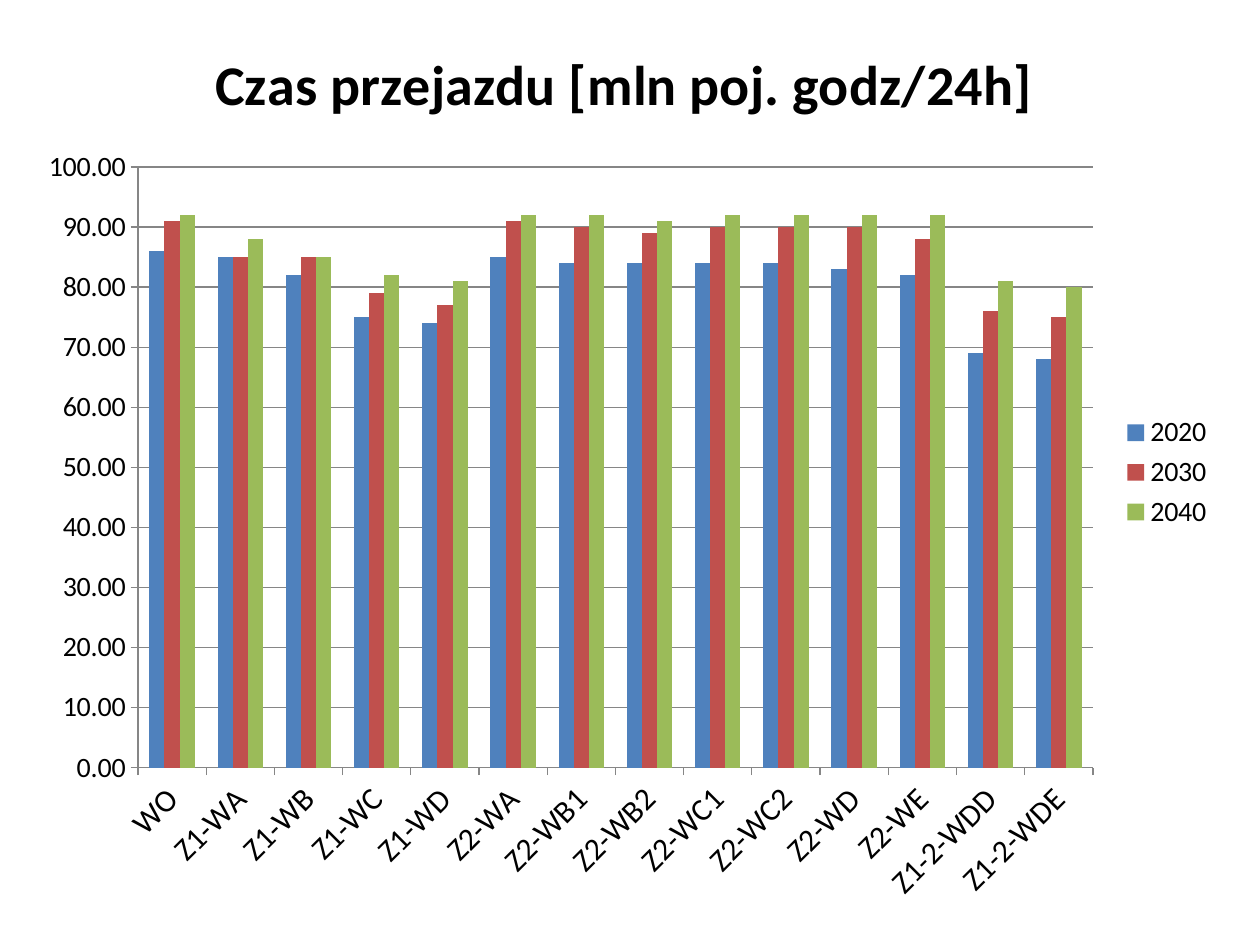
import pptx
import pptx.chart.data
import pptx.dml.color
import pptx.enum.chart
import pptx.oxml
import pptx.oxml.ns
import pptx.util

PX = 914400 // 126
TITLE = "Czas przejazdu [mln poj. godz/24h]"
VARIANTS = ["WO", "Z1-WA", "Z1-WB", "Z1-WC", "Z1-WD", "Z2-WA", "Z2-WB1",
            "Z2-WB2", "Z2-WC1", "Z2-WC2", "Z2-WD", "Z2-WE", "Z1-2-WDD", "Z1-2-WDE"]
YEARS = [
    ("2020", "4F81BD", [86, 85, 82, 75, 74, 85, 84, 84, 84, 84, 83, 82, 69, 68]),
    ("2030", "C0504D", [91, 85, 85, 79, 77, 91, 90, 89, 90, 90, 90, 88, 76, 75]),
    ("2040", "9BBB59", [92, 88, 85, 82, 81, 92, 92, 91, 92, 92, 92, 92, 81, 80]),
]
CHART = (25, 26, 1201, 893)
PLOT = (138, 167, 955, 601)
TITLE_CORNER = (205, 35)


def rgb(color):
    return pptx.dml.color.RGBColor.from_string(color)


def style(font, size, bold=False):
    font.name = "Calibri"
    font.size = pptx.util.Pt(size)
    font.bold = bold
    font.color.rgb = rgb("000000")


def place(parent, index, box, target=""):
    left, top, width, height = CHART
    shares = [(box[0] - left) / width, (box[1] - top) / height]
    if len(box) == 4:
        shares += [box[2] / width, box[3] / height]
    values = "".join(f'<c:{k} val="{v:.4f}"/>' for k, v in zip("xywh", shares))
    layout = pptx.oxml.parse_xml(
        f'<c:layout {pptx.oxml.ns.nsdecls("c")}><c:manualLayout>{target}'
        f'<c:xMode val="edge"/><c:yMode val="edge"/>{values}'
        '</c:manualLayout></c:layout>')
    for old in parent.findall(pptx.oxml.ns.qn("c:layout")):
        parent.remove(old)
    parent.insert(index, layout)


prs = pptx.Presentation()
prs.slide_width = pptx.util.Inches(10)
prs.slide_height = pptx.util.Inches(7.5)
s = prs.slides.add_slide(prs.slide_layouts[6])

data = pptx.chart.data.CategoryChartData(number_format="0.00")
data.categories = VARIANTS
for year, color, values in YEARS:
    data.add_series(year, values)
chart = s.shapes.add_chart(pptx.enum.chart.XL_CHART_TYPE.COLUMN_CLUSTERED,
                           *(v * PX for v in CHART), data).chart
style(chart.font, 10)

chart.has_title = True
p = chart.chart_title.text_frame.paragraphs[0]
p.text = TITLE
style(p.font, 32, True)
chart.chart_title.include_in_layout = False

chart.has_legend = True
chart.legend.position = pptx.enum.chart.XL_LEGEND_POSITION.RIGHT
chart.legend.include_in_layout = False
style(chart.legend.font, 16)

plot = chart.plots[0]
plot.gap_width = 150
plot.overlap = 0
plot.vary_by_categories = False
for series, (year, color, values) in zip(plot.series, YEARS):
    series.format.fill.solid()
    series.format.fill.fore_color.rgb = rgb(color)

cat_axis, val_axis = chart.category_axis, chart.value_axis
for axis, size in ((cat_axis, 18), (val_axis, 16)):
    style(axis.tick_labels.font, size)
    axis.major_tick_mark = pptx.enum.chart.XL_TICK_MARK.OUTSIDE
    axis.minor_tick_mark = pptx.enum.chart.XL_TICK_MARK.NONE
    axis.format.line.color.rgb = rgb("868686")
cat_axis._element.txPr.find(pptx.oxml.ns.qn("a:bodyPr")).set("rot", "-2700000")

val_axis.minimum_scale = 0
val_axis.maximum_scale = 100
val_axis.major_unit = 10
val_axis.tick_labels.number_format = "0.00"
val_axis.tick_labels.number_format_is_linked = False
val_axis.has_major_gridlines = True
val_axis.major_gridlines.format.line.color.rgb = rgb("868686")

place(plot._element.getparent(), 0, PLOT, '<c:layoutTarget val="inner"/>')
place(chart.chart_title._element, 1, TITLE_CORNER)
prs.save("out.pptx")
